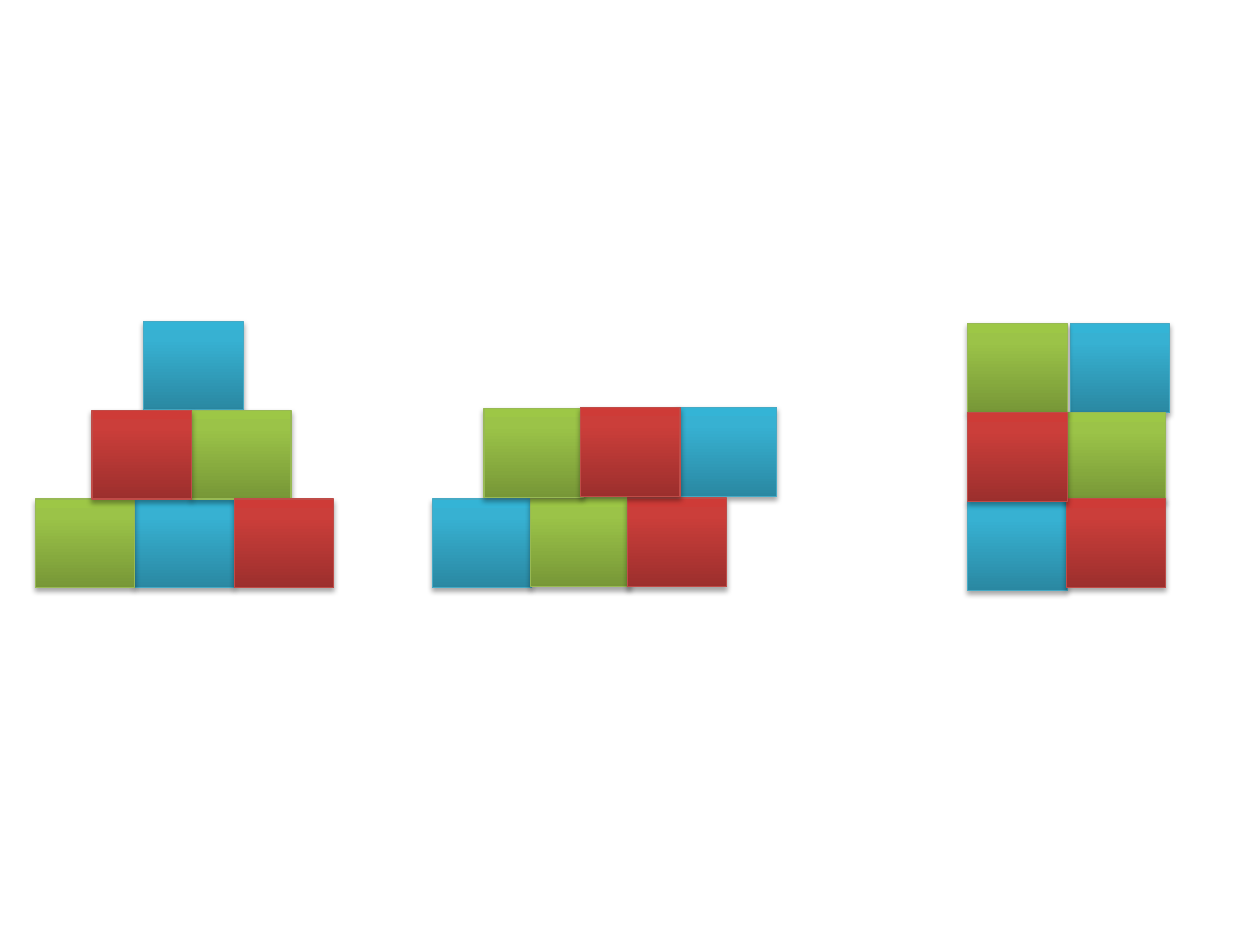
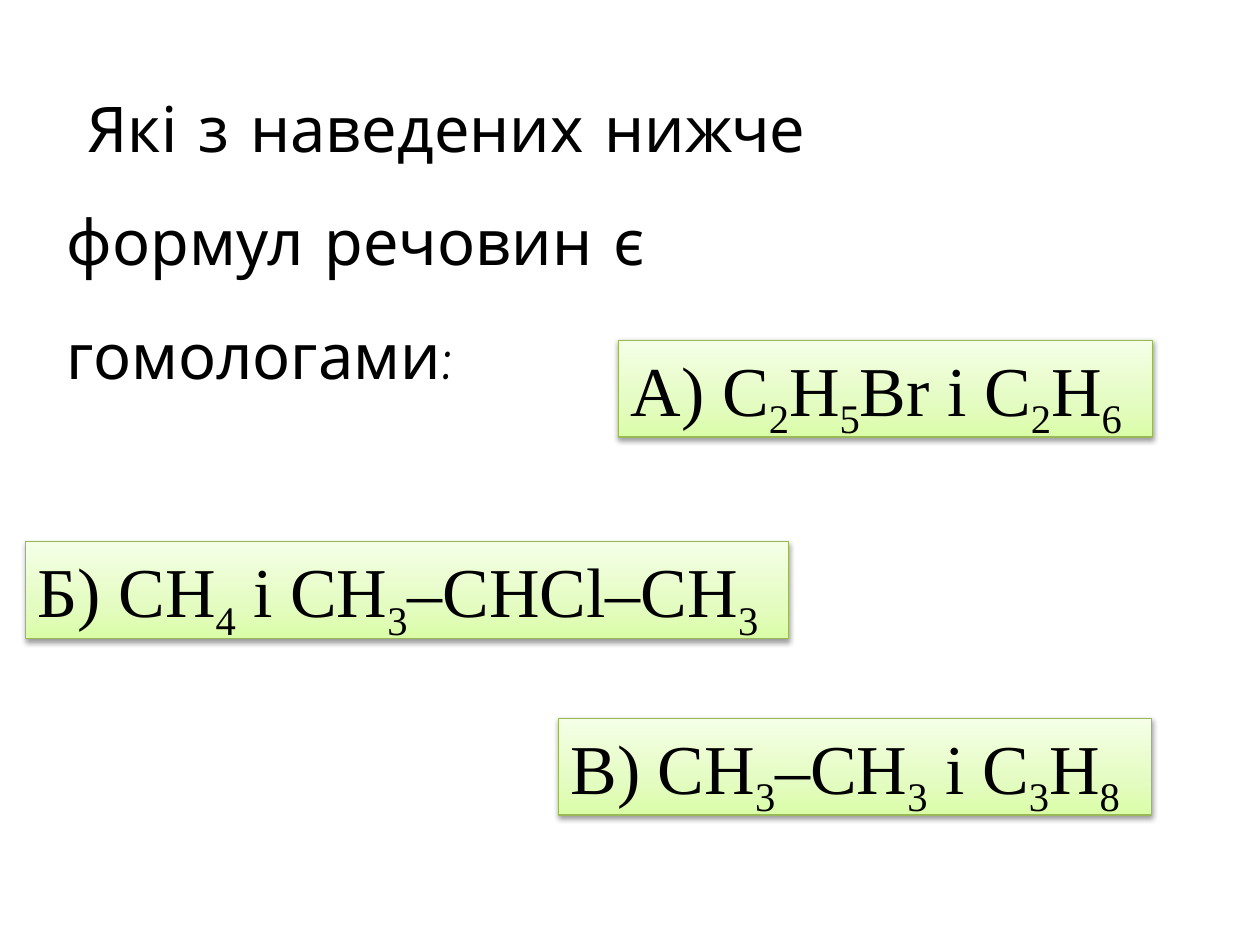
from dataclasses import dataclass
from itertools import groupby

from lxml import etree
from pptx import Presentation, util as u
from pptx.dml.color import RGBColor
from pptx.enum import shapes, text
from pptx.oxml import ns

SLIDE_WIDTH, SLIDE_HEIGHT = u.Inches(10), u.Inches(7.5)
COLUMN, ROW = 7.9, 9.4
OPTION_HEIGHT = 10.27

COLOURS = {
    "blue edge": "46AAC5", "blue low": "2A88A2", "blue mid": "37B1D2", "blue top": "34B4D6",
    "green edge": "98B955", "green low": "779737", "green mid": "9BC348", "green top": "9DC746",
    "red edge": "BF4C48", "red low": "9C2F2D", "red mid": "CB3E3A", "red top": "CE3B37",
    "pale edge": "98B955", "pale low": "DAFDA7", "pale mid": "E4FCC2", "pale top": "F5FFE7",
    "ink": "000000",
}


@dataclass(frozen=True)
class Finish:
    hue: str
    middle: int
    shadow_alpha: int
    shadow_distance: float


@dataclass(frozen=True)
class Cube:
    column: float
    level: float
    hue: str


@dataclass(frozen=True)
class Stack:
    left: float
    base: float
    cubes: tuple[Cube, ...]


@dataclass(frozen=True)
class Option:
    left: float
    top: float
    width: float
    formulas: str


CUBE_FINISHES = [Finish(hue, 80, 35, 1.8) for hue in ("blue", "green", "red")]
OPTION_FINISH = Finish("pale", 35, 38, 1.6)

STACKS = [
    Stack(2.8, 52.8, (
        Cube(0, 0, "green"), Cube(1, 0, "blue"), Cube(2, 0, "red"),
        Cube(0.57, 1, "red"), Cube(1.57, 1, "green"), Cube(1.09, 2, "blue"),
    )),
    Stack(34.3, 52.8, (
        Cube(0, 0, "blue"), Cube(0.99, 0.01, "green"), Cube(1.96, 0.01, "red"),
        Cube(0.52, 1.02, "green"), Cube(1.49, 1.03, "red"), Cube(2.46, 1.03, "blue"),
    )),
    Stack(76.8, 53.07, (
        Cube(0, 0, "blue"), Cube(0.99, 0.03, "red"), Cube(0, 1, "red"),
        Cube(0.99, 1, "green"), Cube(0, 2, "green"), Cube(1.03, 2, "blue"),
    )),
]

QUESTION = " Які з наведених нижче формул речовин є гомологами:"
OPTIONS = [
    Option(49.1, 36, 42.4, "А) С2Н5Br і С2Н6"),
    Option(2, 57.33, 60.6, "Б) СН4 і СН3–СНСl–СН3"),
    Option(44.3, 76, 47.1, "В) СН3–СН3 і С3Н8"),
]


def place(left: float, top: float, width: float, height: float) -> tuple[int, ...]:
    return (int(SLIDE_WIDTH * left / 100), int(SLIDE_HEIGHT * top / 100),
            int(SLIDE_WIDTH * width / 100), int(SLIDE_HEIGHT * height / 100))


def add_colour(parent, colour: str):
    return etree.SubElement(parent, ns.qn("a:srgbClr"), val=COLOURS[colour])


def draw_panel(slide, bounds: tuple[int, ...], finish: Finish):
    panel = slide.shapes.add_shape(shapes.MSO_SHAPE.RECTANGLE, *bounds)
    panel.fill.gradient()
    panel.fill.gradient_angle = 90
    stops = panel.element.spPr.find(".//" + ns.qn("a:gsLst"))
    for stop in list(stops):
        stops.remove(stop)
    for share, tone in ((0, "low"), (finish.middle, "mid"), (100, "top")):
        stop = etree.SubElement(stops, ns.qn("a:gs"), pos=str(share * 1000))
        add_colour(stop, f"{finish.hue} {tone}")
    panel.line.color.rgb = RGBColor.from_string(COLOURS[f"{finish.hue} edge"])
    panel.line.width = u.Pt(0.75)
    panel.shadow.inherit = False
    effects = panel.element.spPr.find(ns.qn("a:effectLst"))
    shadow = etree.SubElement(
        effects, ns.qn("a:outerShdw"), blurRad=str(u.Pt(3.1)),
        dist=str(u.Pt(finish.shadow_distance)), dir="5400000", rotWithShape="0")
    etree.SubElement(add_colour(shadow, "ink"), ns.qn("a:alpha"),
                     val=str(finish.shadow_alpha * 1000))
    return panel


def style_run(run, font: str, size: float) -> None:
    run.font.name = font
    run.font.size = u.Pt(size)
    run.font.color.rgb = RGBColor.from_string(COLOURS["ink"])


def draw_stacks(slide) -> None:
    for finish in CUBE_FINISHES:
        for stack in STACKS:
            for cube in stack.cubes:
                if cube.hue == finish.hue:
                    draw_panel(slide, place(stack.left + cube.column * COLUMN,
                                            stack.base - cube.level * ROW,
                                            COLUMN, ROW), finish)


def draw_question(slide) -> None:
    question = slide.shapes.add_textbox(*place(4.3, 4.8, 65.2, 36.4))
    frame = question.text_frame
    frame.word_wrap = True
    frame.auto_size = text.MSO_AUTO_SIZE.SHAPE_TO_FIT_TEXT
    frame.text = QUESTION
    paragraph = frame.paragraphs[0]
    paragraph.line_spacing = 1.5
    style_run(paragraph.runs[0], "Comic Neue", 36)


def draw_option(slide, option: Option) -> None:
    bounds = place(option.left, option.top, option.width, OPTION_HEIGHT)
    frame = draw_panel(slide, bounds, OPTION_FINISH).text_frame
    frame.word_wrap = True
    frame.vertical_anchor = text.MSO_ANCHOR.TOP
    paragraph = frame.paragraphs[0]
    paragraph.alignment = text.PP_ALIGN.LEFT
    for is_index, letters in groupby(option.formulas, str.isdigit):
        run = paragraph.add_run()
        run.text = "".join(letters)
        style_run(run, "Times New Roman", 40)
        if is_index:
            run.font.element.set("baseline", "-25000") if hasattr(run.font, "element") \
                else run.element_properties() if hasattr(run, "element_properties") \
                else paragraph.runs[-1]._r.get_or_add_rPr().set("baseline", "-25000")


def main() -> None:
    deck = Presentation()
    deck.slide_width, deck.slide_height = SLIDE_WIDTH, SLIDE_HEIGHT
    blank = deck.slide_layouts[6]
    draw_stacks(deck.slides.add_slide(blank))
    homologues = deck.slides.add_slide(blank)
    draw_question(homologues)
    for option in OPTIONS:
        draw_option(homologues, option)
    deck.save("out.pptx")


if __name__ == "__main__":
    main()
